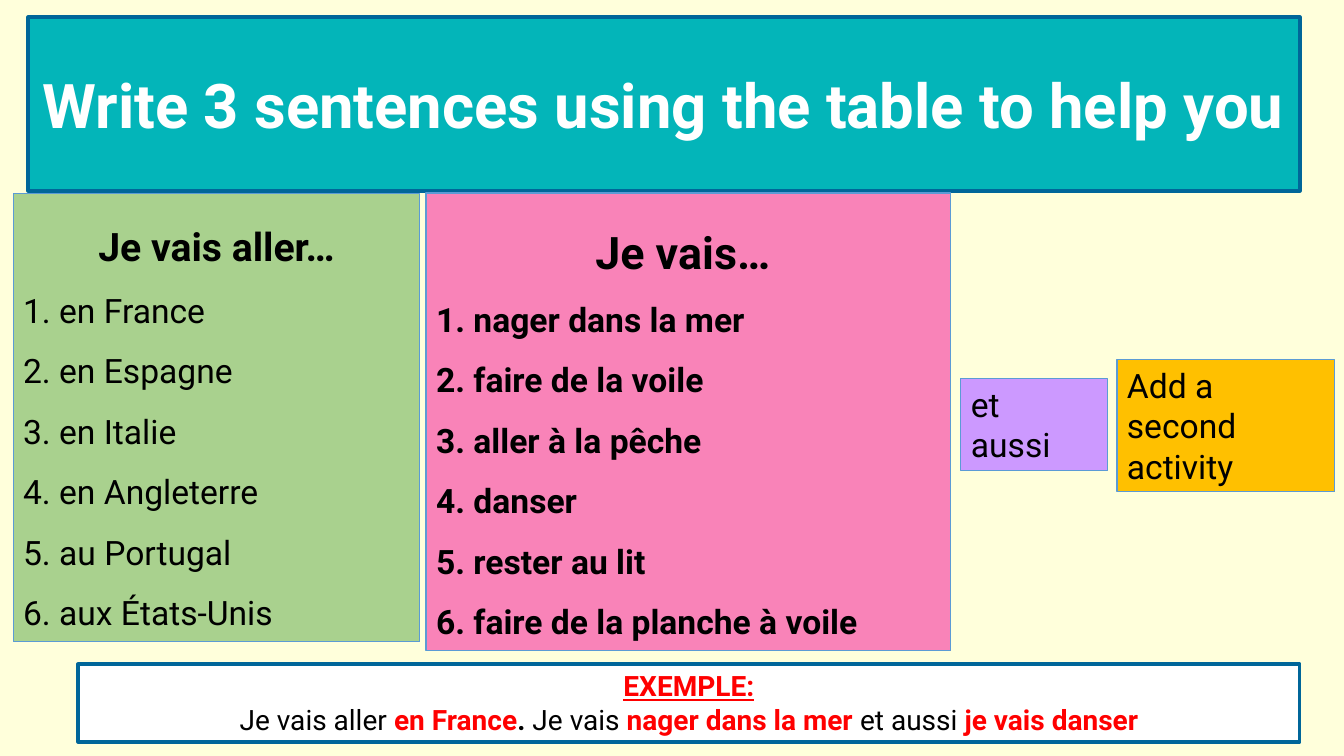
from pptx import Presentation
from pptx import util as u
from pptx.dml import color
from pptx.enum import shapes, text
from pptx.oxml import ns

PX_PER_INCH = 100.8
FONT = "Roboto"
BLACK, WHITE, RED = "000000", "FFFFFF", "FF0000"
NAVY, BLUE = "006699", "5B9BD5"
COUNTRIES = ["en France", "en Espagne", "en Italie", "en Angleterre",
             "au Portugal", "aux États-Unis"]
ACTIVITIES = ["nager dans la mer", "faire de la voile", "aller à la pêche",
              "danser", "rester au lit", "faire de la planche à voile"]


def px(length):
    return u.Inches(length / PX_PER_INCH)


def rgb(hex_string):
    return color.RGBColor.from_string(hex_string)


def style_panel(shape, box, fill, border, border_width, anchor=text.MSO_ANCHOR.TOP):
    """Place a shape or placeholder and give it its fill, border and text frame."""
    shape.left, shape.top, shape.width, shape.height = map(px, box)
    shape.shadow.inherit = False
    shape.fill.solid()
    shape.fill.fore_color.rgb = rgb(fill)
    shape.line.color.rgb = rgb(border)
    shape.line.width = u.Pt(border_width)
    frame = shape.text_frame
    frame.word_wrap = True
    frame.auto_size = text.MSO_AUTO_SIZE.NONE
    frame.vertical_anchor = anchor
    return frame


def add_panel(slide, box, fill, border=BLUE, border_width=0.75):
    shape = slide.shapes.add_shape(shapes.MSO_SHAPE.RECTANGLE, *map(px, box))
    return style_panel(shape, box, fill, border, border_width)


def add_paragraph(frame, align=text.PP_ALIGN.LEFT, spacing=1.0):
    """Return the first paragraph while it is empty, otherwise a new one."""
    first = frame.paragraphs[0]
    paragraph = frame.add_paragraph() if first.runs else first
    paragraph.alignment = align
    paragraph.line_spacing = spacing
    paragraph.space_before = paragraph.space_after = u.Pt(0)
    return paragraph


def remove_bullet(paragraph):
    properties = paragraph._p.get_or_add_pPr()
    properties.set("marL", "0")
    properties.set("indent", "0")
    properties.append(properties.makeelement(ns.qn("a:buNone"), {}))


def add_run(paragraph, words, size, hex_color=BLACK, bold=False, underline=False):
    run = paragraph.add_run()
    run.text = words
    font = run.font
    font.name, font.size = FONT, u.Pt(size)
    font.bold, font.underline = bold, underline
    font.color.rgb = rgb(hex_color)


def fill_list(placeholder, box, fill, heading, heading_size, items, bold):
    frame = style_panel(placeholder, box, fill, BLUE, 0.75)
    paragraph = add_paragraph(frame, text.PP_ALIGN.CENTER, 1.5)
    remove_bullet(paragraph)
    add_run(paragraph, heading, heading_size, bold=True)
    for number, item in enumerate(items, 1):
        paragraph = add_paragraph(frame, spacing=1.5)
        remove_bullet(paragraph)
        add_run(paragraph, f"{number}. {item}", 24, bold=bold)


def add_note(slide, box, fill, lines):
    frame = add_panel(slide, box, fill)
    for line in lines:
        add_run(add_paragraph(frame), line, 24)


def add_example(slide):
    frame = add_panel(slide, (78, 664, 1222, 78), WHITE, NAVY, 2.25)
    heading = add_paragraph(frame, text.PP_ALIGN.CENTER)
    add_run(heading, "EXEMPLE:", 20, RED, bold=True, underline=True)
    sentence = add_paragraph(frame, text.PP_ALIGN.CENTER)
    for words, hex_color, bold in [
        ("Je vais aller ", BLACK, False),
        ("en France", RED, True),
        (". ", BLACK, True),
        ("Je vais ", BLACK, False),
        ("nager dans la mer ", RED, True),
        ("et aussi ", BLACK, False),
        ("je vais danser", RED, True),
    ]:
        add_run(sentence, words, 20, hex_color, bold)


def main():
    presentation = Presentation()
    presentation.slide_width, presentation.slide_height = px(1344), px(756)
    two_content = presentation.slide_layouts.get_by_name("Two Content")
    slide = presentation.slides.add_slide(two_content)
    slide.background.fill.solid()
    slide.background.fill.fore_color.rgb = rgb("FFFFDB")

    title, countries, activities = list(slide.placeholders)[:3]
    frame = style_panel(title, (28, 17, 1272, 174), "03B5B9", NAVY, 2.25,
                        text.MSO_ANCHOR.MIDDLE)
    add_run(add_paragraph(frame, text.PP_ALIGN.CENTER),
            "Write 3 sentences using the table to help you", 44, WHITE, bold=True)

    fill_list(countries, (13, 194, 407, 448), "A9D18E",
              "Je vais aller…", 28, COUNTRIES, bold=False)
    fill_list(activities, (426, 193, 525, 458), "F983B8",
              "Je vais… ", 32, ACTIVITIES, bold=True)
    add_note(slide, (961, 379, 147, 92), "CC99FF", ["et", "aussi"])
    add_note(slide, (1117, 360, 218, 132), "FFC000", ["Add a second activity"])
    add_example(slide)
    presentation.save("out.pptx")


if __name__ == "__main__":
    main()
